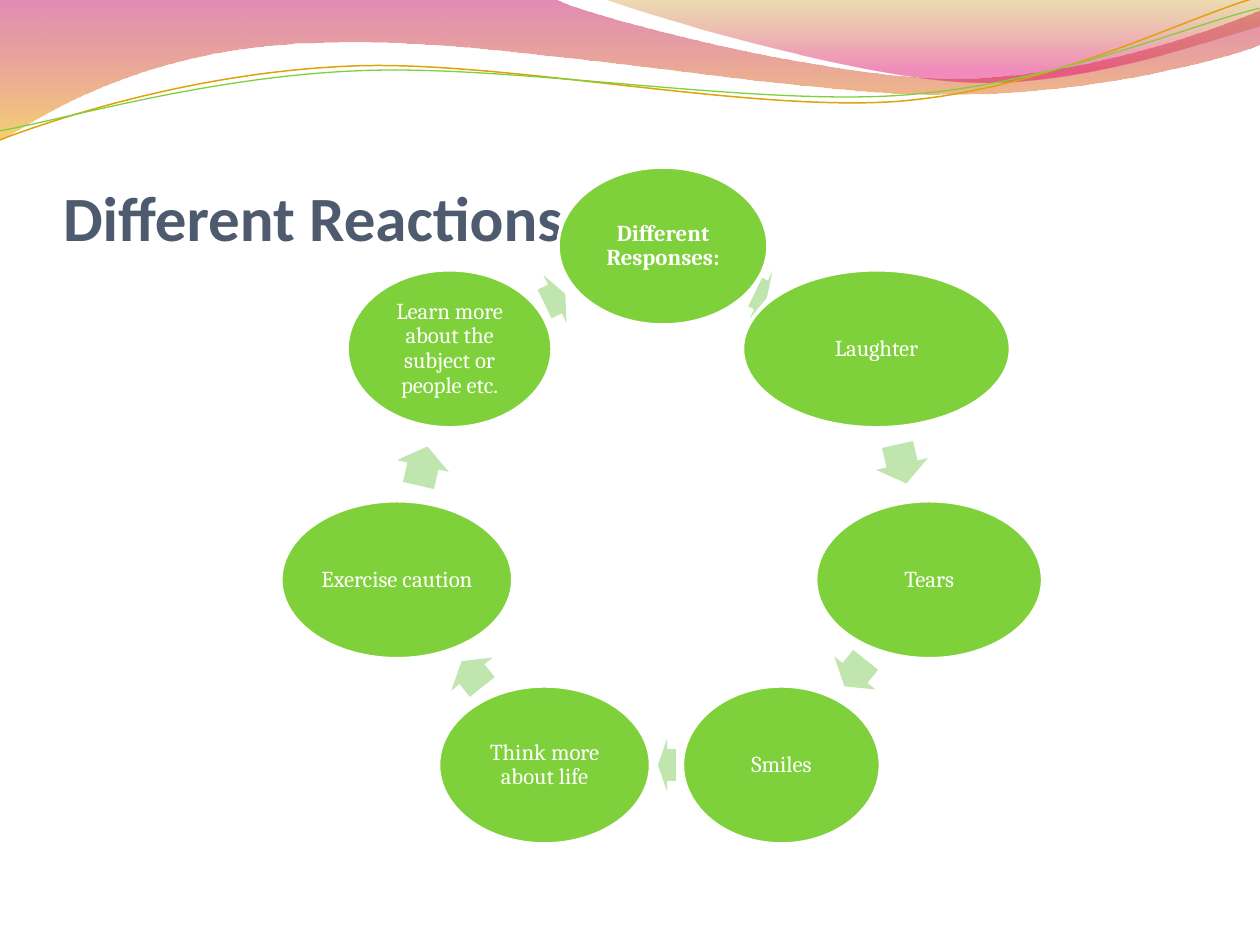
from math import cos, pi, sin

from lxml.etree import SubElement
from pptx import Presentation
from pptx.dml.color import RGBColor
from pptx.enum.shapes import MSO_SHAPE
from pptx.enum.text import MSO_ANCHOR, MSO_AUTO_SIZE, PP_ALIGN
from pptx.oxml.ns import qn
from pptx.util import Pt

PX = 914400 / 126
GREEN = "7FD13B"
MID_X, MID_Y, RADIUS = 663, 519, 273
NODE_H, ARROW_H = 158, 53
TILT = 357.3

NODES = [  # label, width
    ("Different Responses:", 210),
    ("Laughter", 268),
    ("Tears", 227),
    ("Smiles", 198),
    ("Think more about life", 212),
    ("Exercise caution", 232),
    ("Learn more about the subject or people etc.", 205),
]
ARROWS = [  # centre x, centre y, width
    (761, 295, 13), (902, 464, 40), (855, 673, 34), (667, 765, 18),
    (472, 674, 33), (423, 466, 40), (555, 299, 23),
]

# Each step holds the end point of a line, or the three points of a curve.
BAND = [(0, 0), (554, -1), (600, 21, 837, 79, 955, 79),
        (1075, 79, 1207, 33, 1260, 11), (1261, 45),
        (1239, 55, 1096, 96, 940, 95), (784, 95, 481, 35, 324, 43),
        (163, 45, 58, 105, -1, 142)]
CREST = [(604, -1), (641, 14, 859, 78, 969, 82),
         (1079, 87, 1211, 40, 1260, 26), (1260, 0)]
GOLD_LINE = [(-2, 110), (59, 90, 199, 52, 350, 53),
             (499, 53, 745, 118, 896, 114), (1048, 109, 1184, 45, 1260, 27)]
GREEN_LINE = [(-2, 101), (57, 94, 207, 57, 357, 58),
              (509, 58, 750, 112, 902, 108), (1052, 104, 1188, 52, 1262, 38)]


def px(n):
    return round(n * PX)


def color(code):
    return RGBColor.from_string(code)


def add_path(slide, steps, box, close):
    """Build an outline in the given box and bend its curved steps."""
    ends = [(px(step[-2]), px(step[-1])) for step in steps]
    pen = slide.shapes.build_freeform(*ends[0], scale=1.0)
    pen.add_line_segments(ends[1:], close=close)
    shape = pen.convert_to_shape()
    shape.shadow.inherit = False
    shape.left, shape.top, shape.width, shape.height = map(px, box)
    route = next(shape.element.iter(qn("a:path")))
    route.set("w", str(px(box[2])))
    route.set("h", str(px(box[3])))
    for node, step in zip(list(route), steps):
        if len(step) == 6:
            node.tag = qn("a:cubicBezTo")
        for point in list(node):
            node.remove(point)
        for x, y in zip(step[::2], step[1::2]):
            SubElement(node, qn("a:pt"), x=str(px(x - box[0])), y=str(px(y - box[1])))
    return shape


def add_wave(slide, steps, box, stops):
    """Draw a closed wave; stops hold position, colour and opacity in percent."""
    wave = add_path(slide, steps, box, True)
    wave.line.fill.background()
    wave.fill.gradient()
    wave.fill.gradient_angle = 270
    for stop, (place, code, _) in zip(wave.fill.gradient_stops, stops):
        stop.position = place / 100
        stop.color.rgb = color(code)
    tags = wave.element.spPr.iter(qn("a:srgbClr"))
    for tag, (_, _, alpha) in zip(tags, stops):
        SubElement(tag, qn("a:alpha"), val=str(alpha * 1000))


def add_line(slide, steps, box, code, width):
    line = add_path(slide, steps, box, False)
    line.rotation = TILT
    line.fill.background()
    line.line.color.rgb = color(code)
    line.line.width = Pt(width)


def add_shape(slide, kind, mid_x, mid_y, width, height, fill):
    """Add a filled preset shape around its centre."""
    shape = slide.shapes.add_shape(kind, px(mid_x - width / 2), px(mid_y - height / 2),
                                   px(width), px(height))
    shape.shadow.inherit = False
    shape.fill.solid()
    shape.fill.fore_color.rgb = color(fill)
    shape.line.fill.background()
    return shape


def set_text(shape, text, *, size, font, code, bold=False, align=PP_ALIGN.LEFT,
             anchor=MSO_ANCHOR.MIDDLE, inset=(0, 0, 0, 0), spacing=1.0):
    frame = shape.text_frame
    frame.word_wrap = True
    frame.auto_size = MSO_AUTO_SIZE.NONE
    frame.vertical_anchor = anchor
    (frame.margin_left, frame.margin_top,
     frame.margin_right, frame.margin_bottom) = map(px, inset)
    para = frame.paragraphs[0]
    para.alignment = align
    para.line_spacing = spacing
    run = para.add_run()
    run.text = text
    run.font.size = Pt(size)
    run.font.name = font
    run.font.bold = bold
    run.font.color.rgb = color(code)


def add_title(slide, text):
    title = slide.shapes.title
    title.left, title.top, title.width, title.height = map(px, (63, 97, 1134, 157))
    set_text(title, text, size=36, font="Calibri", code="4E5B6F", bold=True,
             anchor=MSO_ANCHOR.BOTTOM, inset=(0, 6, 0, 0))


def add_cycle(slide):
    step = 360 / len(NODES)
    for i, ((label, width), (x, y, length)) in enumerate(zip(NODES, ARROWS)):
        turn = 2 * pi * i / len(NODES)
        node = add_shape(slide, MSO_SHAPE.OVAL, MID_X + RADIUS * sin(turn),
                         MID_Y - RADIUS * cos(turn), width, NODE_H, GREEN)
        node.line.color.rgb = color("FFFFFF")
        node.line.width = Pt(2)
        set_text(node, label, size=13, font="Cambria", code="FFFFFF", bold=i == 0,
                 align=PP_ALIGN.CENTER, inset=(2, 2, 2, 2), spacing=0.9)
        arrow = add_shape(slide, MSO_SHAPE.RIGHT_ARROW, x, y, length, ARROW_H, "C0E5AF")
        arrow.adjustments[0] = 0.6
        arrow.adjustments[1] = 0.5
        arrow.rotation = step * (i + 0.5)


def main():
    deck = Presentation()
    deck.slide_width, deck.slide_height = px(1260), px(945)
    slide = deck.slides.add_slide(deck.slide_layouts[5])
    add_wave(slide, BAND, (-1, -1, 1263, 144), [(0, "BD0059", 45), (100, "F0AB00", 55)])
    add_wave(slide, CREST, (604, -1, 656, 88), [(0, "C38B00", 30), (80, "E1006B", 45)])
    add_line(slide, GOLD_LINE, (-2, 28, 1263, 89), "E0A209", 0.85)
    add_line(slide, GREEN_LINE, (-2, 38, 1264, 73), GREEN, 0.75)
    add_title(slide, "Different Reactions")
    add_cycle(slide)
    deck.save("out.pptx")


if __name__ == "__main__":
    main()
